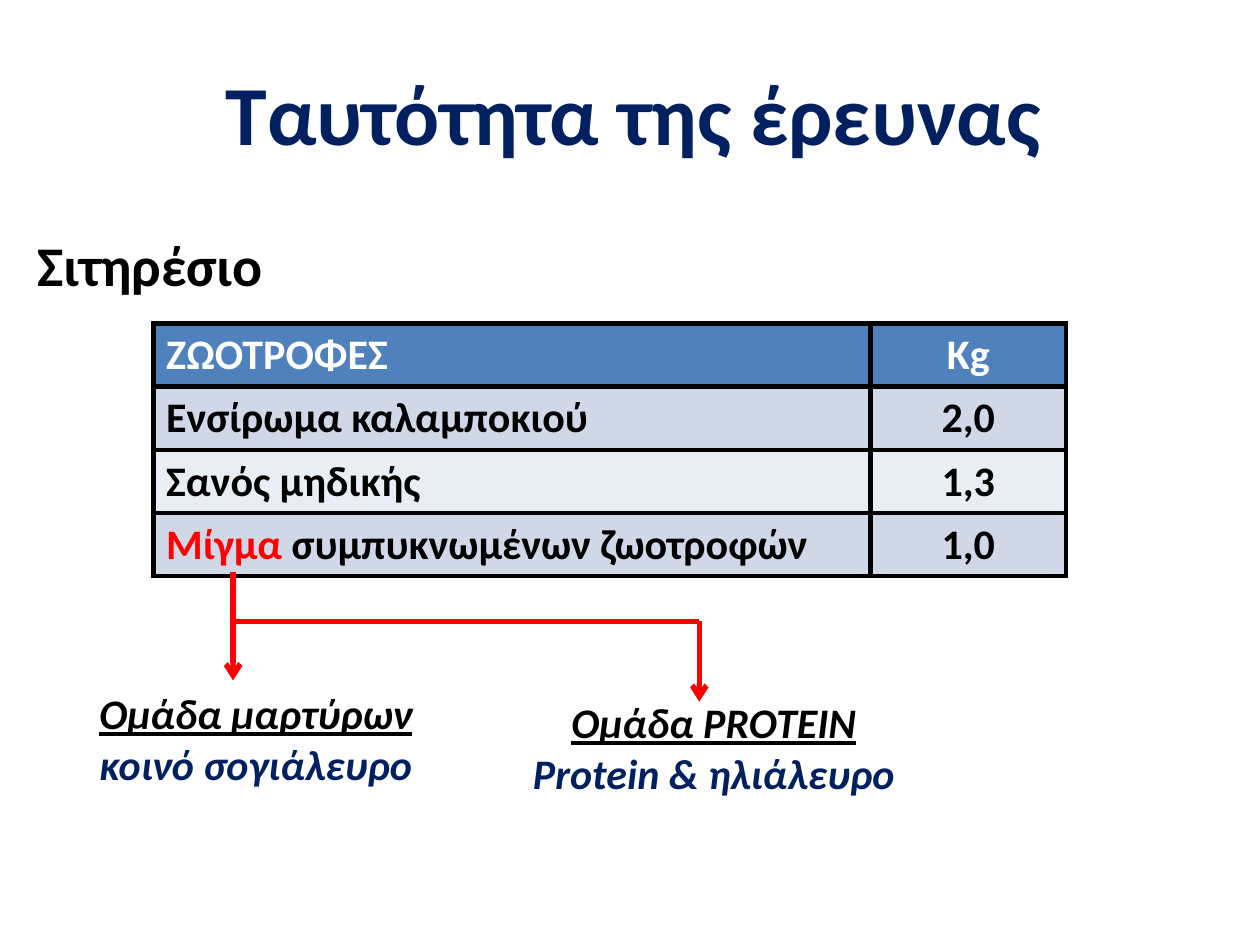
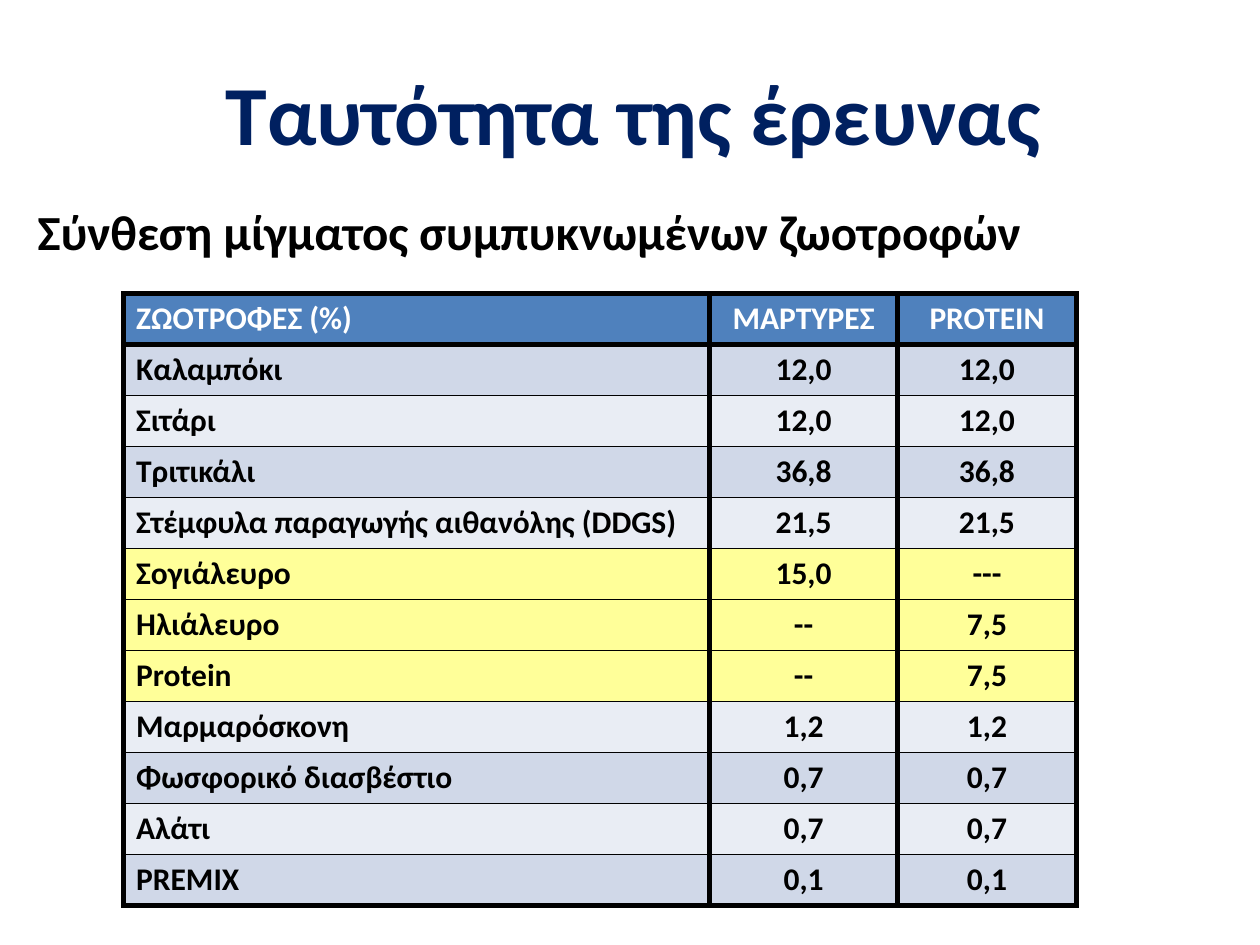
from dataclasses import dataclass

from lxml.etree import SubElement
from pptx import Presentation
from pptx.dml.color import RGBColor
from pptx.enum.shapes import MSO_CONNECTOR
from pptx.enum.text import MSO_ANCHOR, MSO_AUTO_SIZE, PP_ALIGN
from pptx.oxml import parse_xml
from pptx.oxml.ns import nsdecls, qn
from pptx.slide import Slide
from pptx.table import Table, _Cell
from pptx.text.text import Font, TextFrame
from pptx.util import Pt

FACE = "Calibri"
COLORS = {
    "navy": "002060", "black": "000000", "white": "FFFFFF", "red": "FF0000",
    "head": "4F81BD", "dark": "D0D8E8", "light": "E9EDF4", "mark": "FFFF99",
}
THICK, THIN = 3, 1


@dataclass
class Line:
    text: str
    size: float
    color: str = "black"
    italic: bool = False
    under: bool = False


@dataclass
class Label:
    left: float
    top: float
    width: float
    height: float
    lines: list[Line]
    align: PP_ALIGN = PP_ALIGN.LEFT


@dataclass
class Wire:
    start: tuple[float, float]
    end: tuple[float, float]
    arrow: bool = False


@dataclass
class Grid:
    left: float
    top: float
    cols: list[float]
    height: float
    size: float
    rows: list[tuple[str, ...]]
    inner: float = THICK
    marks: tuple[str, ...] = ()


def paint(name: str) -> RGBColor:
    return RGBColor.from_string(COLORS[name])


def style(font: Font, line: Line) -> None:
    font.name = FACE
    font.size = Pt(line.size)
    font.bold = True
    font.italic = line.italic
    font.underline = line.under
    font.color.rgb = paint(line.color)


def write(frame: TextFrame, lines: list[Line], align: PP_ALIGN) -> None:
    for index, line in enumerate(lines):
        para = frame.add_paragraph() if index else frame.paragraphs[0]
        para.text = line.text
        para.alignment = align
        style(para.font, line)


def add_label(slide: Slide, label: Label) -> None:
    box = slide.shapes.add_textbox(Pt(label.left), Pt(label.top),
                                   Pt(label.width), Pt(label.height))
    box.text_frame.word_wrap = False
    write(box.text_frame, label.lines, label.align)


def add_wire(slide: Slide, wire: Wire) -> None:
    link = slide.shapes.add_connector(
        MSO_CONNECTOR.STRAIGHT, *map(Pt, wire.start + wire.end))
    link.line.width = Pt(THICK)
    link.line.color.rgb = paint("red")
    if wire.arrow:
        SubElement(link.line._get_or_add_ln(), qn("a:tailEnd"), type="arrow")
    SubElement(link._element.spPr, qn("a:effectLst"))


def add_edges(cell: _Cell, top: float, bottom: float) -> None:
    """Border the cell; its left and right edges are always thick."""
    props = cell._tc.get_or_add_tcPr()
    edges = {"L": THICK, "R": THICK, "T": top, "B": bottom}
    for index, (side, width) in enumerate(edges.items()):
        props.insert(index, parse_xml(
            f'<a:ln{side} {nsdecls("a")} w="{Pt(width)}"><a:solidFill>'
            f'<a:srgbClr val="{COLORS["black"]}"/></a:solidFill></a:ln{side}>'))


def row_fill(grid: Grid, row: int) -> str:
    if row == 0:
        return "head"
    if grid.rows[row][0] in grid.marks:
        return "mark"
    return "dark" if row % 2 else "light"


def add_grid(slide: Slide, grid: Grid) -> Table:
    count = len(grid.rows)
    table = slide.shapes.add_table(
        count, len(grid.cols), Pt(grid.left), Pt(grid.top),
        Pt(sum(grid.cols)), Pt(grid.height * count)).table
    for col, width in zip(table.columns, grid.cols):
        col.width = Pt(width)
    for r, texts in enumerate(grid.rows):
        table.rows[r].height = Pt(grid.height)
        top = THICK if r < 2 else grid.inner
        bottom = THICK if r in (0, count - 1) else grid.inner
        for c, text in enumerate(texts):
            cell = table.cell(r, c)
            cell.fill.solid()
            cell.fill.fore_color.rgb = paint(row_fill(grid, r))
            add_edges(cell, top, bottom)
            color = "black" if r else "white"
            write(cell.text_frame, [Line(text, grid.size, color)],
                  PP_ALIGN.CENTER if c else PP_ALIGN.LEFT)
    return table


def add_page(deck: Presentation, label: Label) -> Slide:
    """Add a slide with the shared title and its own heading."""
    slide = deck.slides.add_slide(deck.slide_layouts[5])
    title = slide.shapes.title
    title.left, title.top = Pt(121.7), Pt(31.7)
    title.width, title.height = Pt(485.3), Pt(65.5)
    frame = title.text_frame
    frame.word_wrap = False
    frame.auto_size = MSO_AUTO_SIZE.NONE
    frame.vertical_anchor = MSO_ANCHOR.TOP
    write(frame, [Line("Ταυτότητα της έρευνας", 48, "navy")], PP_ALIGN.LEFT)
    add_label(slide, label)
    return slide


def group(left: float, top: float, width: float, name: str, feed: str) -> Label:
    lines = [Line(name, 24, italic=True, under=True),
             Line(feed, 24, "navy", italic=True)]
    return Label(left, top, width, 65.5, lines, PP_ALIGN.CENTER)


def add_ration(deck: Presentation) -> None:
    slide = add_page(deck, Label(14.4, 128.2, 144, 46, [Line("Σιτηρέσιο", 32)]))
    table = add_grid(slide, Grid(87.8, 185, [409.7, 111.6], 36, 24, [
        ("ΖΩΟΤΡΟΦΕΣ", "Kg"),
        ("Ενσίρωμα καλαμποκιού", "2,0"),
        ("Σανός μηδικής", "1,3"),
        ("Μίγμα", "1,0"),
    ]))
    para = table.cell(3, 0).text_frame.paragraphs[0]
    para.runs[0].font.color.rgb = paint("red")
    para.add_run().text = " συμπυκνωμένων ζωοτροφών"

    add_label(slide, group(46.1, 389.5, 200.2, "Ομάδα μαρτύρων", "κοινό σογιάλευρο"))
    left, right, fork = 133.2, 399.6, 355
    for wire in (Wire((left, 326.9), (left, 388.8), True),
                 Wire((left, fork), (right, fork)),
                 Wire((right, fork), (right, 401), True)):
        add_wire(slide, wire)
    add_label(slide, group(290.2, 394.6, 235.4, "Ομάδα PROTEIN", "Protein & ηλιάλευρο"))


def add_blend(deck: Presentation) -> None:
    slide = add_page(deck, Label(14.4, 111.6, 582.5, 41, [
        Line("Σύνθεση μίγματος συμπυκνωμένων ζωοτροφών", 28)]))
    add_grid(slide, Grid(70.6, 167.8, [334.8, 107.6, 102], 29.16, 18, [
        ("ΖΩΟΤΡΟΦΕΣ (%)", "ΜΑΡΤΥΡΕΣ", "PROTEIN"),
        ("Καλαμπόκι", "12,0", "12,0"),
        ("Σιτάρι", "12,0", "12,0"),
        ("Τριτικάλι", "36,8", "36,8"),
        ("Στέμφυλα παραγωγής αιθανόλης (DDGS)", "21,5", "21,5"),
        ("Σογιάλευρο", "15,0", "---"),
        ("Ηλιάλευρο", "--", "7,5"),
        ("Protein", "--", "7,5"),
        ("Μαρμαρόσκονη", "1,2", "1,2"),
        ("Φωσφορικό διασβέστιο", "0,7", "0,7"),
        ("Αλάτι", "0,7", "0,7"),
        ("PREMIX", "0,1", "0,1"),
    ], THIN, ("Σογιάλευρο", "Ηλιάλευρο", "Protein")))


def main() -> None:
    deck = Presentation()
    deck.slide_width, deck.slide_height = Pt(720), Pt(540)
    add_ration(deck)
    add_blend(deck)
    deck.save("out.pptx")


if __name__ == "__main__":
    main()
